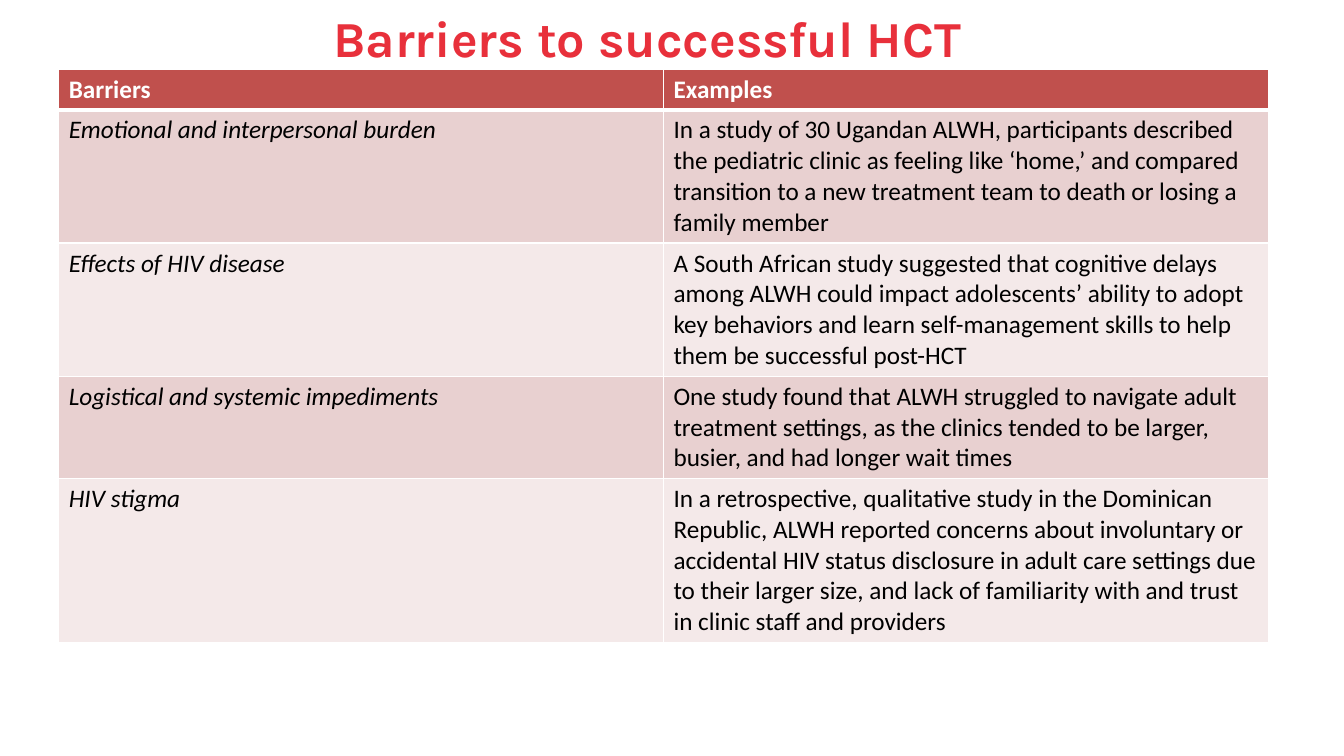
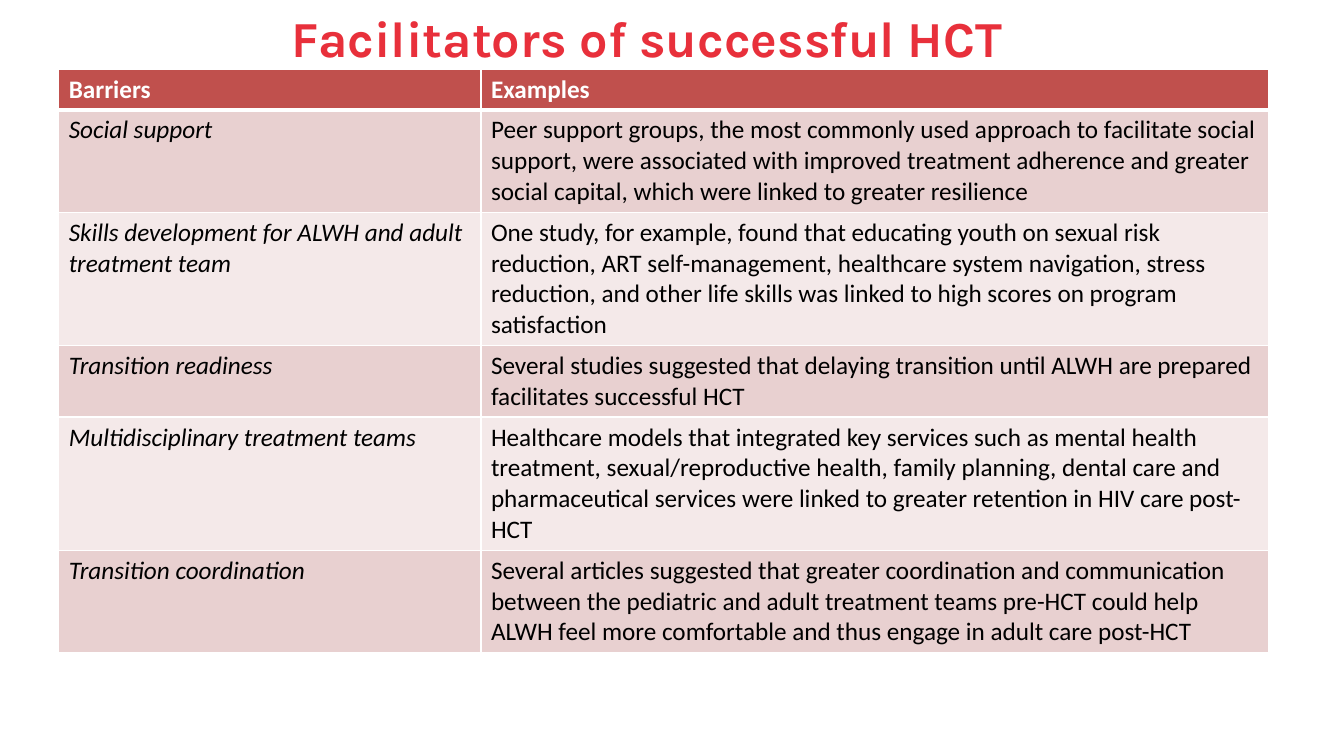
from dataclasses import dataclass

from pptx import Presentation
from pptx.dml.color import RGBColor
from pptx.enum.text import MSO_ANCHOR, MSO_AUTO_SIZE, PP_ALIGN
from pptx.oxml.ns import qn
from pptx.util import Cm, Pt
from lxml.etree import SubElement


@dataclass(frozen=True)
class Theme:
    title_color: str = "E8303B"
    header_fill: str = "C0504D"
    band_fills: tuple = ("E8D0D0", "F4E9E9")
    header_text: str = "FFFFFF"
    body_text: str = "000000"
    border: str = "FFFFFF"
    title_font: str = "Karla"
    body_font: str = "Calibri"
    title_size: int = 36
    body_size: int = 18
    thin: int = 1
    thick: int = 3


class Deck:
    TITLE_ONLY = 5

    def __init__(self, theme):
        self.theme = theme
        self.prs = Presentation()
        self.prs.slide_width, self.prs.slide_height = Cm(33.87), Cm(19.05)
        self.s = None

    def slide(self, title):
        t = self.theme
        self.s = self.prs.slides.add_slide(self.prs.slide_layouts[self.TITLE_ONLY])
        sp = self.s.shapes.title
        sp.left, sp.top, sp.width, sp.height = Cm(1.07), Cm(0.25), Cm(30.48), Cm(1.4)
        tf = sp.text_frame
        tf.margin_left = tf.margin_right = tf.margin_top = tf.margin_bottom = 0
        tf.auto_size = MSO_AUTO_SIZE.NONE
        tf.vertical_anchor = MSO_ANCHOR.MIDDLE
        p = tf.paragraphs[0]
        p.alignment = PP_ALIGN.CENTER
        self.run(p, title, t.title_font, t.title_size, t.title_color, bold=True)

    def run(self, p, text, font, size, color, bold=False, italic=False):
        r = p.add_run()
        r.text = text
        r.font.name, r.font.size = font, Pt(size)
        r.font.bold, r.font.italic = bold, italic
        r.font.color.rgb = RGBColor.from_string(color)

    def borders(self, cell, top, bottom):
        """Draw the four cell edges; the side edges are always thin."""
        t = self.theme
        tc_pr = cell._tc.get_or_add_tcPr()
        for side, width in (("L", t.thin), ("R", t.thin), ("T", top), ("B", bottom)):
            ln = SubElement(tc_pr, qn(f"a:ln{side}"), w=str(Pt(width)))
            fill = SubElement(ln, qn("a:solidFill"))
            SubElement(fill, qn("a:srgbClr"), val=t.border)

    def table(self, widths, rows):
        """Add a header row and banded rows with an italic first column."""
        t = self.theme
        row_height = Cm(1.03)
        rows = [("Barriers", "Examples"), *rows]
        table = self.s.shapes.add_table(
            len(rows), len(widths), Cm(1.48), Cm(1.74),
            Cm(sum(widths)), row_height * len(rows)).table
        for column, width in zip(table.columns, widths):
            column.width = Cm(width)
        for i, texts in enumerate(rows):
            table.rows[i].height = row_height
            header = i == 0
            fill = t.header_fill if header else t.band_fills[(i - 1) % 2]
            color = t.header_text if header else t.body_text
            for j, text in enumerate(texts):
                cell = table.cell(i, j)
                self.borders(cell, top=t.thick if i == 1 else t.thin,
                             bottom=t.thick if header else t.thin)
                cell.fill.solid()
                cell.fill.fore_color.rgb = RGBColor.from_string(fill)
                self.run(cell.text_frame.paragraphs[0], text, t.body_font, t.body_size,
                         color, bold=header, italic=not header and j == 0)


BARRIERS = [
    ("Emotional and interpersonal burden",
     "In a study of 30 Ugandan ALWH, participants described the pediatric clinic as "
     "feeling like ‘home,’ and compared transition to a new treatment team to death "
     "or losing a family member"),
    ("Effects of HIV disease",
     "A South African study suggested that cognitive delays among ALWH could impact "
     "adolescents’ ability to adopt key behaviors and learn self-management skills to "
     "help them be successful post-HCT"),
    ("Logistical and systemic impediments",
     "One study found that ALWH struggled to navigate adult treatment settings, as the "
     "clinics tended to be larger, busier, and had longer wait times"),
    ("HIV stigma",
     "In a retrospective, qualitative study in the Dominican Republic, ALWH reported "
     "concerns about involuntary or accidental HIV status disclosure in adult care "
     "settings due to their larger size, and lack of familiarity with and trust in "
     "clinic staff and providers"),
]

FACILITATORS = [
    ("Social support",
     "Peer support groups, the most commonly used approach to facilitate social support, "
     "were associated with improved treatment adherence and greater social capital, "
     "which were linked to greater resilience"),
    ("Skills development for ALWH and adult treatment team",
     "One study, for example, found that educating youth on sexual risk reduction, ART "
     "self-management, healthcare system navigation, stress reduction, and other life "
     "skills was linked to high scores on program satisfaction"),
    ("Transition readiness",
     "Several studies suggested that delaying transition until ALWH are prepared "
     "facilitates successful HCT"),
    ("Multidisciplinary treatment teams",
     "Healthcare models that integrated key services such as mental health treatment, "
     "sexual/reproductive health, family planning, dental care and pharmaceutical "
     "services were linked to greater retention in HIV care post-HCT"),
    ("Transition coordination",
     "Several articles suggested that greater coordination and communication between the "
     "pediatric and adult treatment teams pre-HCT could help ALWH feel more comfortable "
     "and thus engage in adult care post-HCT"),
]


def main():
    deck = Deck(Theme())
    deck.slide("Barriers to successful HCT")
    deck.table((15.24, 15.24), BARRIERS)
    deck.slide("Facilitators of successful HCT")
    deck.table((10.64, 19.84), FACILITATORS)
    deck.prs.save("out.pptx")


if __name__ == "__main__":
    main()
